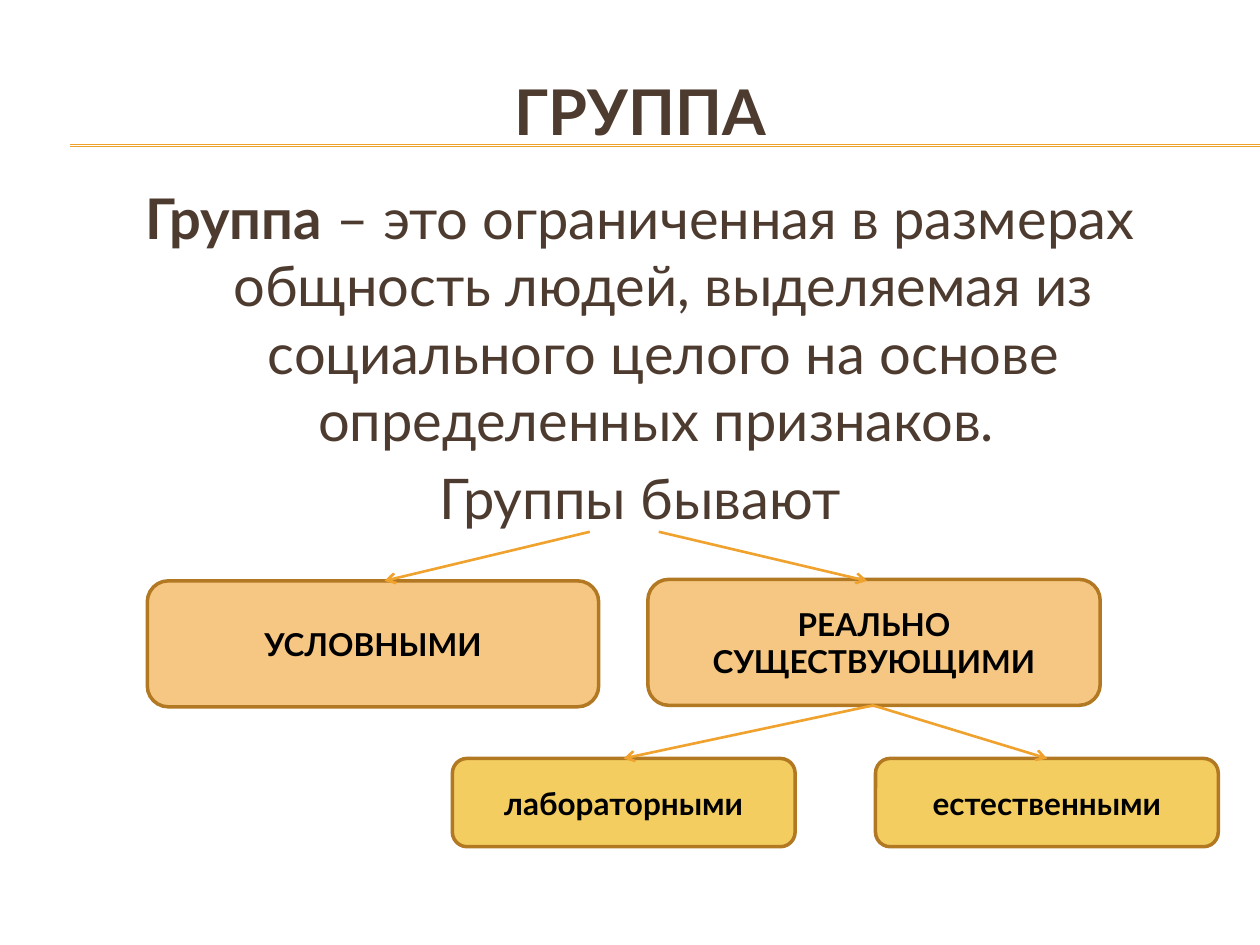
from typing import NamedTuple

from lxml import etree
from pptx import Presentation
from pptx import util as u
from pptx.dml.color import RGBColor
from pptx.enum import shapes, text
from pptx.oxml.ns import qn

FONT = "Lato"
BROWN, BLACK = "4E3B30", "000000"
AMBER, BORDER = "F0A22E", "B27822"
PEACH, YELLOW = "F6C782", "F3CD60"


class Box(NamedTuple):
    label: str
    left: float
    top: float
    width: float
    height: float
    fill: str


class Line(NamedTuple):
    x1: float
    y1: float
    x2: float
    y2: float
    width: float = 1.5
    arrow: bool = True


BOXES = [
    Box("УСЛОВНЫМИ", 2.97, 11.71, 9.1, 2.54, PEACH),
    Box("РЕАЛЬНО СУЩЕСТВУЮЩИМИ", 13.06, 11.68, 9.12, 2.54, PEACH),
    Box("лабораторными", 9.12, 15.29, 6.91, 1.78, YELLOW),
    Box("естественными", 17.65, 15.29, 6.91, 1.78, YELLOW),
]

RULES = [Line(1.42, y, 25.4, y, 0.75, False) for y in (2.92, 2.95)]

ARROWS = [
    Line(11.89, 10.72, 7.75, 11.71),
    Line(13.28, 10.72, 17.48, 11.71),
    Line(17.6, 14.22, 12.57, 15.29),
    Line(17.6, 14.22, 21.11, 15.29),
]


def color(value: str) -> RGBColor:
    return RGBColor.from_string(value)


def add_run(p, content: str, *, size: float, fill: str = BROWN, bold: bool = False) -> None:
    p.alignment = text.PP_ALIGN.CENTER
    r = p.add_run()
    r.text = content
    r.font.name = FONT
    r.font.size = u.Pt(size)
    r.font.bold = bold
    r.font.color.rgb = color(fill)


def add_frame(s, left: float, top: float, width: float, height: float, anchor):
    sp = s.shapes.add_textbox(u.Cm(left), u.Cm(top), u.Cm(width), u.Cm(height))
    tf = sp.text_frame
    tf.word_wrap = True
    tf.vertical_anchor = anchor
    return tf


def add_line(s, line: Line) -> None:
    ends = [u.Cm(v) for v in (line.x1, line.y1, line.x2, line.y2)]
    sp = s.shapes.add_connector(shapes.MSO_CONNECTOR.STRAIGHT, *ends)
    sp.line.color.rgb = color(AMBER)
    sp.line.width = u.Pt(line.width)
    if line.arrow:
        etree.SubElement(sp.line._get_or_add_ln(), qn("a:tailEnd"), type="arrow")
    etree.SubElement(sp._element.spPr, qn("a:effectLst"))


def add_box(s, box: Box) -> None:
    bounds = [u.Cm(v) for v in (box.left, box.top, box.width, box.height)]
    sp = s.shapes.add_shape(shapes.MSO_SHAPE.ROUNDED_RECTANGLE, *bounds)
    sp.shadow.inherit = False
    sp.fill.solid()
    sp.fill.fore_color.rgb = color(box.fill)
    sp.line.color.rgb = color(BORDER)
    sp.line.width = u.Pt(2)
    tf = sp.text_frame
    tf.word_wrap = True
    tf.vertical_anchor = text.MSO_ANCHOR.MIDDLE
    add_run(tf.paragraphs[0], box.label, size=18, fill=BLACK, bold=True)


def add_definition(s) -> None:
    tf = add_frame(s, 0.84, 3.58, 24.13, 14.68, text.MSO_ANCHOR.TOP)
    p = tf.paragraphs[0]
    add_run(p, "Группа", size=32, bold=True)
    add_run(
        p,
        " – это ограниченная в размерах общность людей, выделяемая из "
        "социального целого на основе определенных признаков. ",
        size=32,
    )
    p = tf.add_paragraph()
    p.space_before = u.Pt(6)
    add_run(p, "Группы бывают", size=32)
    for p in tf.paragraphs:
        pPr = p._p.get_or_add_pPr()
        pPr.set("marL", str(u.Cm(0.95)))
        pPr.set("indent", str(-u.Cm(0.95)))


def main() -> None:
    prs = Presentation()
    prs.slide_width, prs.slide_height = u.Cm(25.4), u.Cm(19.05)
    s = prs.slides.add_slide(prs.slide_layouts[6])
    for rule in RULES:
        add_line(s, rule)
    title = add_frame(s, 0.84, 1.27, 24.13, 1.91, text.MSO_ANCHOR.MIDDLE)
    add_run(title.paragraphs[0], "ГРУППА", size=36, bold=True)
    add_definition(s)
    for box in BOXES:
        add_box(s, box)
    for arrow in ARROWS:
        add_line(s, arrow)
    prs.save("out.pptx")


if __name__ == "__main__":
    main()
